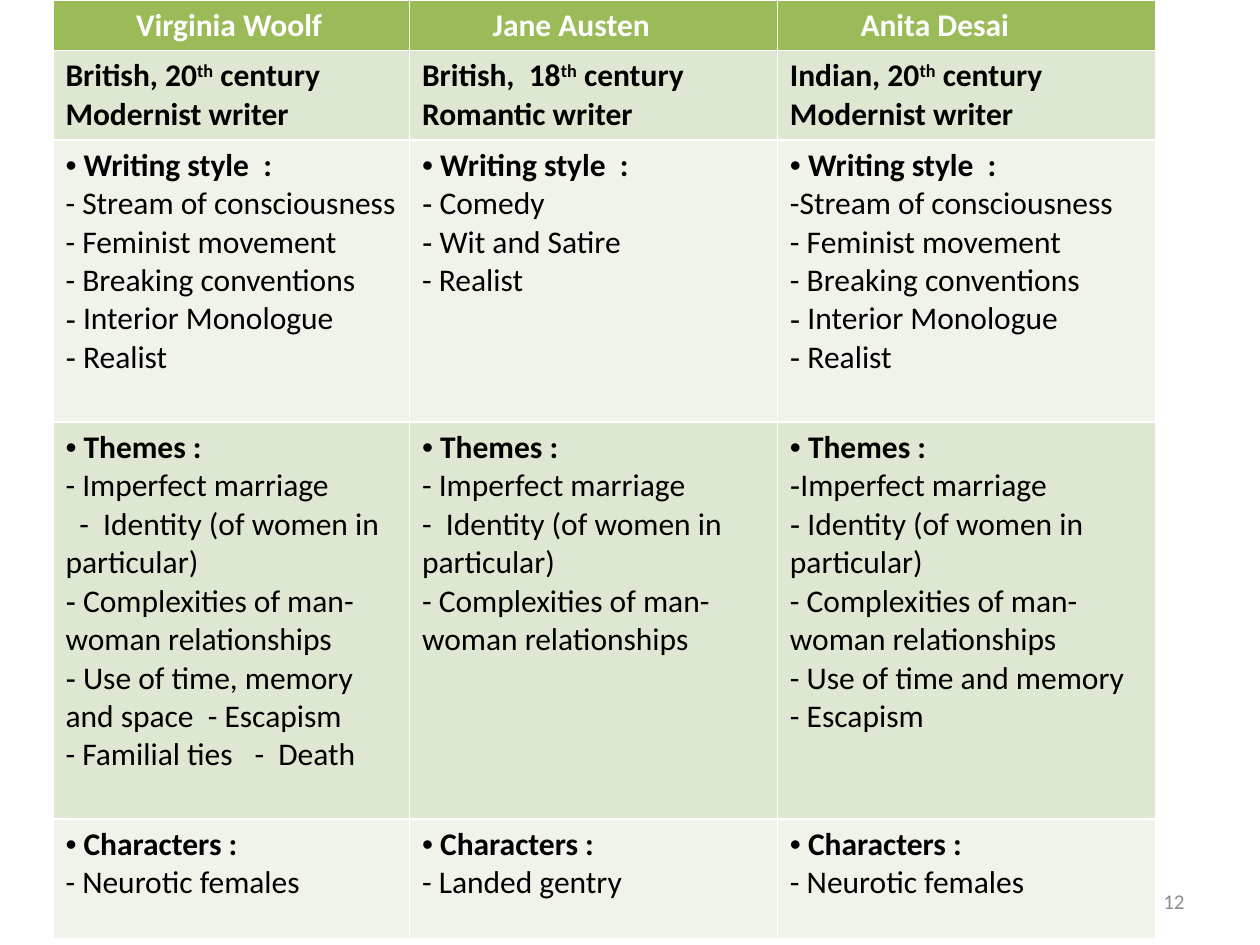
from lxml import etree
from pptx import Presentation
from pptx.dml.color import RGBColor
from pptx.enum import text
from pptx.oxml.ns import qn
from pptx.util import Inches, Pt

THEME = {
    "font": "Calibri", "bullet_font": "Arial", "body": 18, "number": 12,
    "white": "FFFFFF", "black": "000000", "grey": "8C8C8C",
    "head": "9BBB59", "bands": ("DEE7D1", "EFF3EA"),
}
HEADER_INSET, FIRST_INDENT, TAB_STOP = 0.66, 0.11, 1.55


def add_text(p, content, size=THEME["body"], color=THEME["black"], bold=False,
             bullet=None, indent=0, tab=None):
    """Write one paragraph; text between ^ marks is superscript."""
    pPr = p._p.get_or_add_pPr()
    pPr.set("marL", "0")
    pPr.set("indent", str(Inches(indent)))
    if bullet:
        etree.SubElement(pPr, qn("a:buFont"), typeface=THEME["bullet_font"])
        etree.SubElement(pPr, qn("a:buChar"), char=bullet)
    else:
        etree.SubElement(pPr, qn("a:buNone"))
    if tab:
        tabs = etree.SubElement(pPr, qn("a:tabLst"))
        etree.SubElement(tabs, qn("a:tab"), pos=str(Inches(tab)), algn="l")
    for i, part in enumerate(content.split("^")):
        r = p.add_run()
        r.text = part
        r.font.name, r.font.size, r.font.bold = THEME["font"], Pt(size), bold
        r.font.color.rgb = RGBColor.from_string(color)
        if i % 2:
            r.font._element.set("baseline", "30000")


# Content: "x|text" gives the paragraph the bullet x
style, themes, people = "•| Writing style  :", "•| Themes :", "•| Characters :"
stream = ["- Feminist movement", "- Breaking conventions",
          "-| Interior Monologue", "-| Realist"]
identity = "-  Identity (of women in particular)"
complex_ties = " Complexities of man-woman relationships"
rows = [
    [["Virginia Woolf"], ["Jane Austen"], ["Anita Desai"]],
    [["British, 20^th^ century Modernist writer"],
     ["British,  18^th^ century Romantic writer"],
     ["Indian, 20^th^ century Modernist writer"]],
    [[style, "- Stream of consciousness"] + stream,
     [style, "-| Comedy", "-| Wit and Satire", "- Realist"],
     [style, "-Stream of consciousness"] + stream],
    [[themes, "- Imperfect marriage", identity, "-|" + complex_ties,
      "-| Use of time, memory and space  - Escapism",
      "- Familial ties\t-  Death"],
     [themes, "- Imperfect marriage", identity, "-" + complex_ties],
     [themes, "-|Imperfect marriage", "-| Identity (of women in particular)",
      "-" + complex_ties, "- Use of time and memory", "- Escapism"]],
    [[people, "- Neurotic females"], [people, "- Landed gentry"],
     [people, "- Neurotic females"]],
]
col_widths = [2.83, 2.92, 3]
row_heights = [0.4, 0.71, 2.24, 3.15, 0.95]

prs = Presentation()
prs.slide_width, prs.slide_height = Inches(10), Inches(7.5)
s = prs.slides.add_slide(prs.slide_layouts[6])

# Slide number
sp = s.shapes.add_textbox(Inches(7.17), Inches(6.95), Inches(2.33), Inches(0.4))
tf = sp.text_frame
tf.word_wrap = True
tf.vertical_anchor = text.MSO_ANCHOR.MIDDLE
tf.paragraphs[0].alignment = text.PP_ALIGN.RIGHT
add_text(tf.paragraphs[0], "12", size=THEME["number"], color=THEME["grey"])

# Comparison table
table = s.shapes.add_table(
    len(rows), len(col_widths), Inches(0.42), 0,
    Inches(sum(col_widths)), Inches(sum(row_heights))).table
for column, width in zip(table.columns, col_widths):
    column.width = Inches(width)
for row, height in zip(table.rows, row_heights):
    row.height = Inches(height)

for i, row in enumerate(rows):
    for j, lines in enumerate(row):
        cell = table.cell(i, j)
        cell.fill.solid()
        fill = THEME["bands"][(i - 1) % 2] if i else THEME["head"]
        cell.fill.fore_color.rgb = RGBColor.from_string(fill)
        if i == 0:
            cell.margin_left = Inches(HEADER_INSET)
        tf = cell.text_frame
        for k, line in enumerate(lines):
            p = tf.add_paragraph() if k else tf.paragraphs[0]
            bullet, _, content = line.rpartition("|")
            add_text(p, content, bullet=bullet, bold=k == 0,
                     color=THEME["black"] if i else THEME["white"],
                     indent=FIRST_INDENT if line == identity and j == 0 else 0,
                     tab=TAB_STOP if "\t" in line else None)

prs.save("out.pptx")
